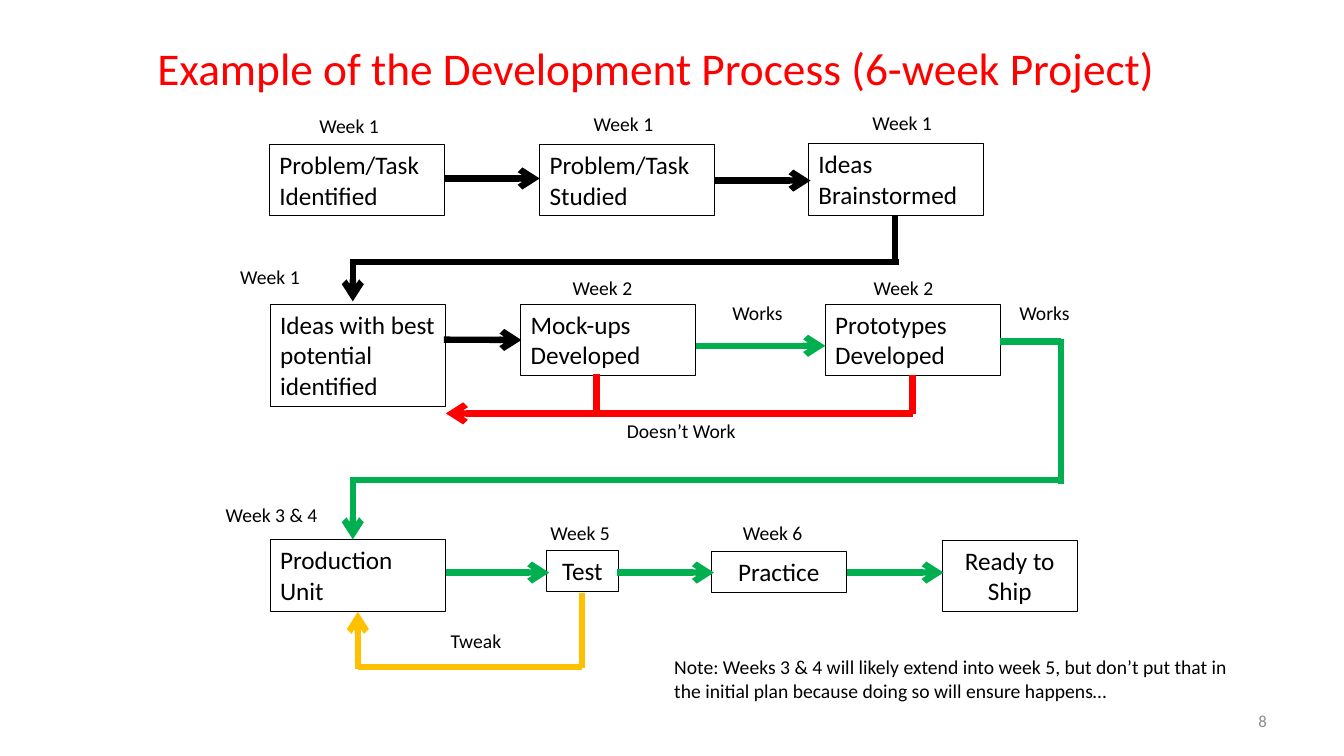
"""Build a flow chart slide of a six-week development process."""
from lxml import etree
from pptx import Presentation
from pptx.dml.color import RGBColor
from pptx.enum.shapes import MSO_CONNECTOR, MSO_SHAPE
from pptx.enum.text import MSO_ANCHOR, PP_ALIGN
from pptx.oxml.ns import qn
from pptx.util import Pt

LEFT, MID, RIGHT = PP_ALIGN.LEFT, PP_ALIGN.CENTER, PP_ALIGN.RIGHT
TOP, CENTRE = MSO_ANCHOR.TOP, MSO_ANCHOR.MIDDLE
RECT, LINE = MSO_SHAPE.RECTANGLE, MSO_CONNECTOR.STRAIGHT
BLACK = RGBColor(0, 0, 0)
RED = RGBColor(0xFF, 0, 0)
GREEN = RGBColor(0, 0xB0, 0x50)
AMBER = RGBColor(0xFF, 0xC0, 0)
GREY = RGBColor(0x8C, 0x8C, 0x8C)
FONT = "Calibri"

TITLE = "Example of the Development Process (6-week Project)"
NOTE = ("Note: Weeks 3 & 4 will likely extend into week 5, but don’t put that "
        "in the initial plan because doing so will ensure happens…")

# text, left, top, width, height, alignment
BOXES = [
    ("Problem/Task Identified", 192.5, 103.3, 125, 51, LEFT),
    ("Problem/Task Studied", 385.5, 103.3, 125, 51, LEFT),
    ("Ideas Brainstormed", 577.5, 102.7, 125, 51, LEFT),
    ("Ideas with best potential identified", 193, 217.5, 125, 72.7, LEFT),
    ("Mock-ups Developed", 372, 217.5, 125, 51, LEFT),
    ("Prototypes Developed", 589.5, 217.5, 125, 51, LEFT),
    ("Production Unit", 193, 385.5, 125, 51, LEFT),
    ("Test", 390.5, 393.3, 51, 29, MID),
    ("Practice", 508, 394, 96.5, 29, MID),
    ("Ready to Ship", 673, 386, 96.5, 51, MID),
]

# text, left, top, width
LABELS = [
    ("Week 1", 221, 78, 61),
    ("Week 1", 417, 76.5, 61),
    ("Week 1", 616, 75.7, 61),
    ("Week 1", 164.5, 185.5, 61),
    ("Week 2", 402, 193.5, 61),
    ("Week 2", 617, 193.5, 61),
    ("Works", 516, 211.3, 66),
    ("Works", 721, 211.3, 57),
    ("Doesn’t Work", 440.7, 296, 108),
    ("Week 3 & 4", 154, 356, 82),
    ("Week 5", 386, 368.3, 61),
    ("Week 6", 523.5, 368.3, 61),
    ("Tweak", 314.7, 446, 57),
]

# start x, start y, end x, end y
ARROWS = {
    BLACK: [(317, 127.5, 385.5, 127.5), (510, 129, 579, 129),
            (252, 185, 252, 215.3), (317, 242.6, 372.5, 242.9)],
    GREEN: [(497, 247, 589.5, 247), (252, 342.7, 252, 385.3),
            (318.5, 409, 392.3, 409), (440.5, 409, 510, 409),
            (605, 409, 674, 409)],
    RED: [(652.5, 295.3, 318.5, 295.3)],
    AMBER: [(255.6, 478, 255.6, 437)],
}
BARS = {
    BLACK: [(250, 187, 642, 187), (639.5, 153.5, 639.5, 187)],
    GREEN: [(250, 342.7, 758, 342.7), (758, 242.5, 758, 345.5),
            (714.5, 244, 758, 244)],
    RED: [(651.7, 296, 651.7, 268), (426, 295.3, 426, 267)],
    AMBER: [(255.6, 476.7, 415.5, 476.7), (415.5, 423.5, 415.5, 477.5)],
}


def write(shape, text, size, tint=BLACK, align=LEFT, anchor=TOP):
    """Fill a shape with one styled paragraph."""
    frame = shape.text_frame
    frame.text = text
    frame.word_wrap = True
    frame.vertical_anchor = anchor
    para = frame.paragraphs[0]
    para.alignment = align
    font = para.runs[0].font
    for name, value in {"name": FONT, "size": Pt(size)}.items():
        setattr(font, name, value)
    font.color.rgb = tint


def place(shape, *rect):
    """Set left, top, width and height in points."""
    for name, value in zip(("left", "top", "width", "height"), rect):
        setattr(shape, name, Pt(value))


def draw(shapes, groups, head):
    """Draw thick lines by colour, with or without arrowheads."""
    for tint, lines in groups.items():
        for ends in lines:
            link = shapes.add_connector(LINE, *map(Pt, ends))
            link.line.color.rgb = tint
            link.line.width = Pt(4.5)
            if head:
                tail = etree.SubElement(link.line._get_or_add_ln(), qn("a:tailEnd"))
                tail.set("type", "arrow")
            etree.SubElement(link._element.spPr, qn("a:effectLst"))


def main():
    """Build and save the slide."""
    deck = Presentation()
    deck.slide_width, deck.slide_height = Pt(960), Pt(540)
    slide = deck.slides.add_slide(deck.slide_layouts[5])
    shapes = slide.shapes

    place(shapes.title, 83, 19.5, 771, 57)
    write(shapes.title, TITLE, 32.4, RED, MID, CENTRE)

    for text, *rect, align in BOXES:
        box = shapes.add_shape(RECT, *map(Pt, rect))
        box.shadow.inherit = False
        box.fill.background()
        box.line.color.rgb = BLACK
        box.line.width = Pt(0.75)
        write(box, text, 18, align=align)

    draw(shapes, BARS, False)
    draw(shapes, ARROWS, True)

    for text, *rect in LABELS:
        write(shapes.add_textbox(*map(Pt, rect), Pt(24.3)), text, 14)
    write(shapes.add_textbox(Pt(474.5), Pt(464.5), Pt(414), Pt(41)), NOTE, 14)
    page = shapes.add_textbox(Pt(688), Pt(500.5), Pt(224), Pt(28.7))
    write(page, "8", 12, GREY, RIGHT, CENTRE)

    deck.save("out.pptx")


if __name__ == "__main__":
    main()
